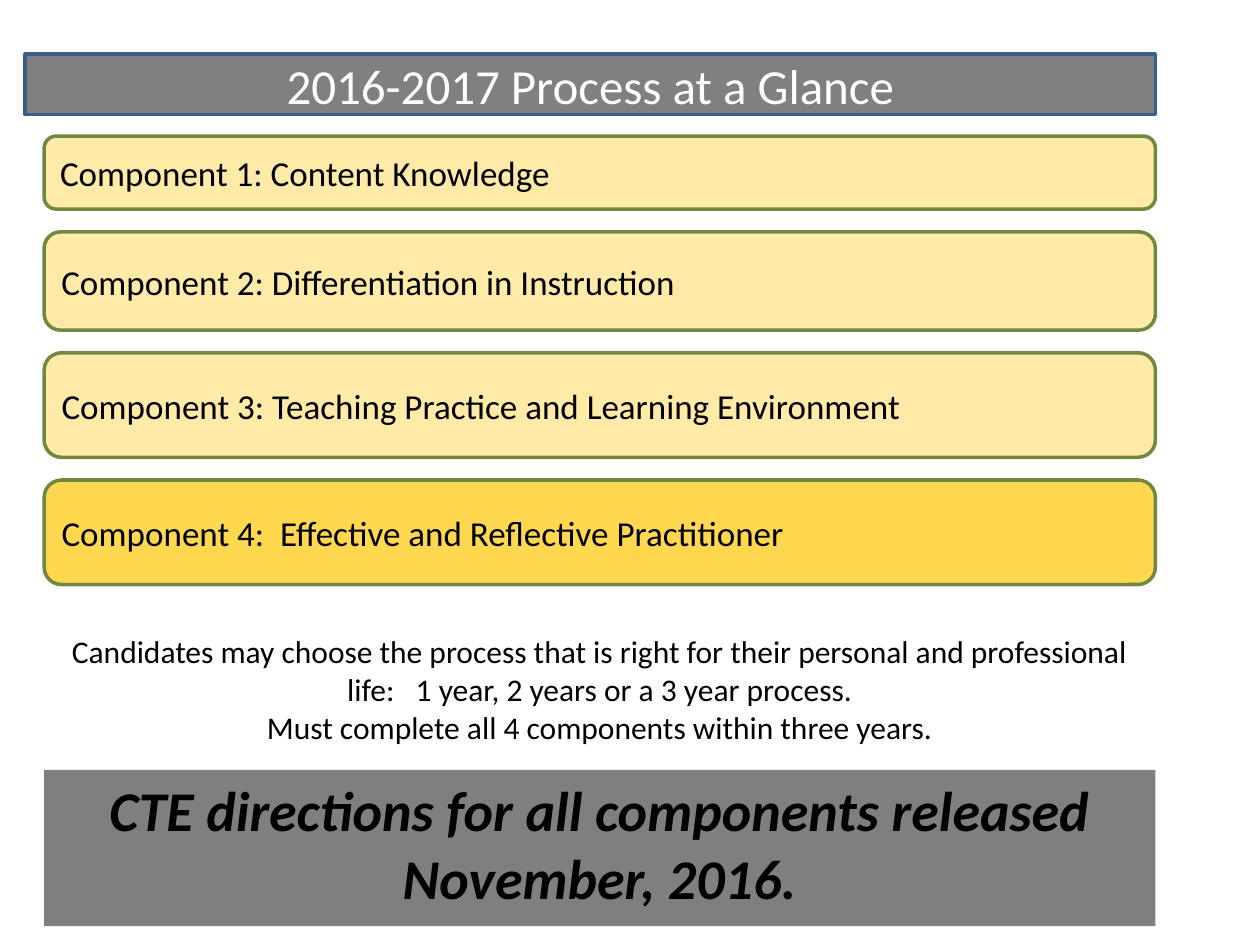
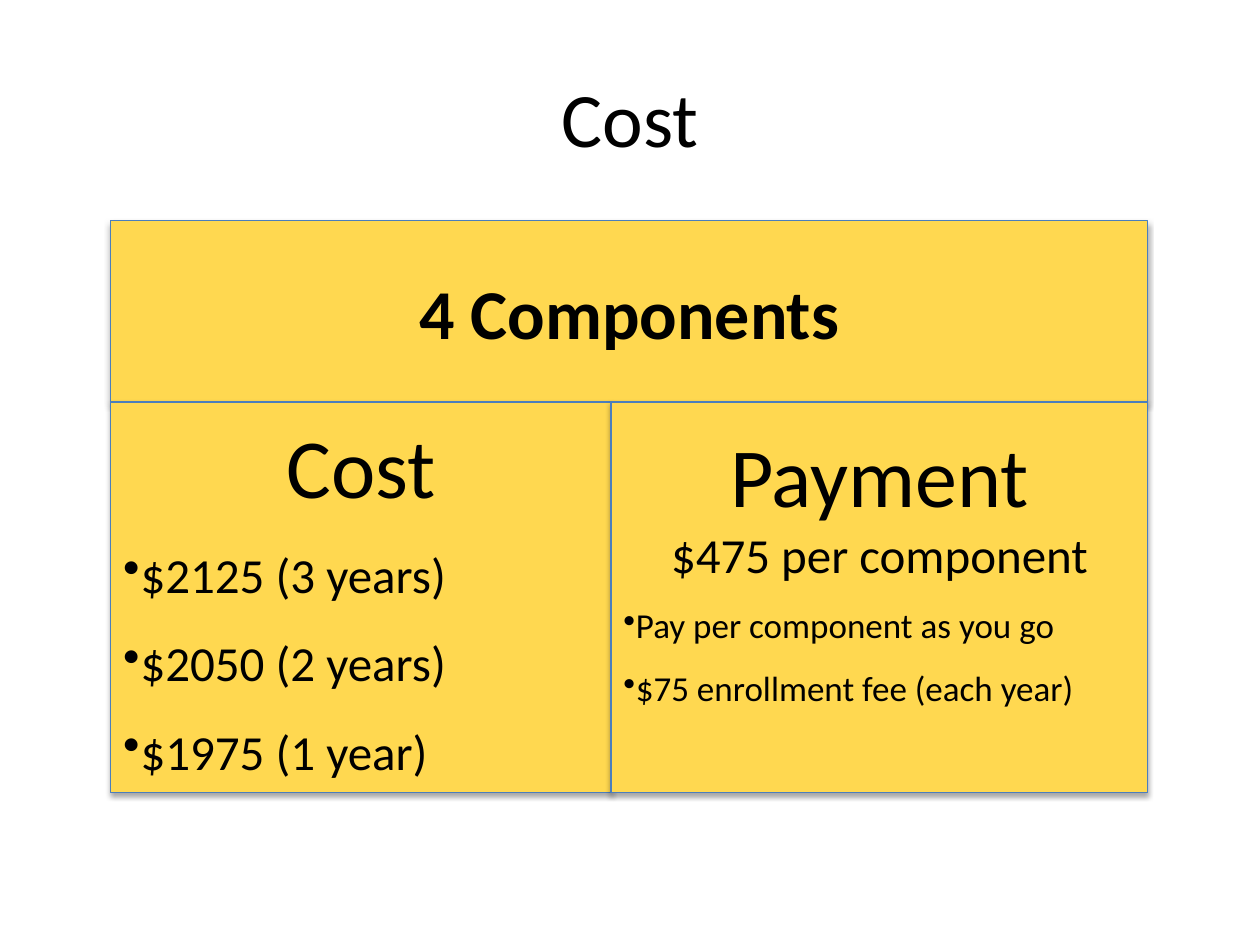
from lxml.etree import SubElement
from pptx import Presentation
from pptx.dml.color import RGBColor
from pptx.enum.shapes import MSO_SHAPE as Shape
from pptx.enum.text import MSO_ANCHOR as Anchor, PP_ALIGN as Align
from pptx.oxml.ns import qn
from pptx.util import Inches, Pt

BLACK = RGBColor(0x00, 0x00, 0x00)
WHITE = RGBColor(0xFF, 0xFF, 0xFF)
GOLD = RGBColor(0xFF, 0xD8, 0x50)
GREEN = RGBColor(0x71, 0x88, 0x40)
GRAY = RGBColor(0x80, 0x80, 0x80)
BAND_GRAY = RGBColor(0x7F, 0x7F, 0x7F)
NAVY = RGBColor(0x39, 0x5E, 0x89)
BLUE = RGBColor(0x4B, 0x7E, 0xBC)


def text(content, size=20, color=BLACK, bold=False, italic=False,
         align=Align.CENTER, bullet=False, spacing=None, before=0):
    return dict(content=content, size=size, color=color, bold=bold, italic=italic,
                align=align, bullet=bullet, spacing=spacing, before=before)


def bullets(lines, size):
    return [text(line, size=size, align=Align.LEFT, bullet=True, spacing=1.5)
            for line in lines]


class Deck:
    font = "Calibri"

    def __init__(self):
        self.presentation = Presentation()
        self.presentation.slide_width = Inches(10)
        self.presentation.slide_height = Inches(7.5)
        self.slide = None

    def add_slide(self):
        self.slide = self.presentation.slides.add_slide(self.presentation.slide_layouts[6])

    def fill_text(self, shape, paragraphs, anchor, inset_top=0.05):
        frame = shape.text_frame
        frame.word_wrap = True
        frame.vertical_anchor = anchor
        frame.margin_top = Inches(inset_top)
        for index, item in enumerate(paragraphs):
            paragraph = frame.add_paragraph() if index else frame.paragraphs[0]
            paragraph.alignment = item["align"]
            paragraph.space_before = Pt(item["before"])
            if item["spacing"]:
                paragraph.line_spacing = item["spacing"]
            if item["bullet"]:
                SubElement(paragraph._p.get_or_add_pPr(), qn("a:buChar"), char="•")
            run = paragraph.add_run()
            run.text = item["content"]
            font = run.font
            font.name = self.font
            font.size = Pt(item["size"])
            font.bold = item["bold"]
            font.italic = item["italic"]
            font.color.rgb = item["color"]

    def text_box(self, place, paragraphs, anchor=Anchor.TOP):
        shape = self.slide.shapes.add_textbox(*map(Inches, place))
        self.fill_text(shape, paragraphs, anchor)

    def box(self, place, paragraphs, fill, line=None, width=2, kind=Shape.RECTANGLE,
            anchor=Anchor.MIDDLE, alpha=None, inset_top=0.05):
        shape = self.slide.shapes.add_shape(kind, *map(Inches, place))
        shape.shadow.inherit = False
        shape.fill.solid()
        shape.fill.fore_color.rgb = fill
        if alpha:
            color = shape._element.spPr.find(qn("a:solidFill"))[0]
            SubElement(color, qn("a:alpha"), val=str(alpha * 1000))
        if line is None:
            shape.line.fill.background()
        else:
            shape.line.color.rgb = line
            shape.line.width = Pt(width)
        self.fill_text(shape, paragraphs, anchor, inset_top)
        return shape

    def panel(self, place, paragraphs, **style):
        shape = self.box(place, paragraphs, GOLD, BLUE, width=0.75, **style)
        effects = shape._element.spPr.find(qn("a:effectLst"))
        shadow = SubElement(effects, qn("a:outerShdw"), blurRad=str(Pt(3.1)),
                            dist=str(Pt(1.8)), dir="5400000", rotWithShape="0")
        color = SubElement(shadow, qn("a:srgbClr"), val=str(BLACK))
        SubElement(color, qn("a:alpha"), val="35000")


def build_process(deck):
    deck.add_slide()
    left, width, gap = 0.35, 8.82, 0.18
    deck.box((left, 6.11, width, 1.24),
             [text("CTE directions for all components released November, 2016.",
                   size=32, bold=True, italic=True)],
             BAND_GRAY, anchor=Anchor.TOP)
    deck.box((0.2, 0.43, 8.97, 0.48),
             [text("2016-2017 Process at a Glance", size=28, color=WHITE)], GRAY, NAVY)
    rounded = Shape.ROUNDED_RECTANGLE
    components = [
        ("Component 1: Content Knowledge", 0.58, rounded, 50),
        ("Component 2: Differentiation in Instruction", 0.78,
         Shape.FLOWCHART_ALTERNATE_PROCESS, 50),
        ("Component 3: Teaching Practice and Learning Environment", 0.83, rounded, 50),
        ("Component 4:  Effective and Reflective Practitioner", 0.83, rounded, None),
    ]
    top = 1.08
    for name, height, kind, alpha in components:
        deck.box((left, top, width, height), [text(name, align=Align.LEFT)],
                 GOLD, GREEN, kind=kind, alpha=alpha)
        top += height + gap
    deck.text_box((left, 4.97, width, 1.31), [
        text("Candidates may choose the process that is right for their personal and "
             "professional life:   1 year, 2 years or a 3 year process.", size=18),
        text("Must complete all 4 components within three years.", size=18),
    ])


def build_cost(deck):
    deck.add_slide()
    left, top, header_height = 0.88, 1.75, 1.44
    cost_width, payment_width, height = 3.97, 4.26, 3.1
    row = top + header_height
    deck.text_box((0.5, 0.3, 9, 1.25), [text("Cost", size=44)], Anchor.MIDDLE)
    deck.panel((left, top, cost_width + payment_width, header_height),
               [text("4 Components", size=40, bold=True, before=8)])
    deck.panel((left, row, cost_width, height),
               [text("Cost", size=48),
                *bullets(["$2125 (3 years)", "$2050 (2 years)", "$1975 (1 year)"], 28)],
               anchor=Anchor.TOP, inset_top=0.1)
    deck.panel((left + cost_width, row, payment_width, height),
               [text("Payment", size=48),
                text("$475 per component", size=28),
                *bullets(["Pay per component as you go",
                          "$75 enrollment fee (each year)"], 20)],
               anchor=Anchor.TOP, inset_top=0.17)


def main():
    deck = Deck()
    build_process(deck)
    build_cost(deck)
    deck.presentation.save("out.pptx")


if __name__ == "__main__":
    main()
